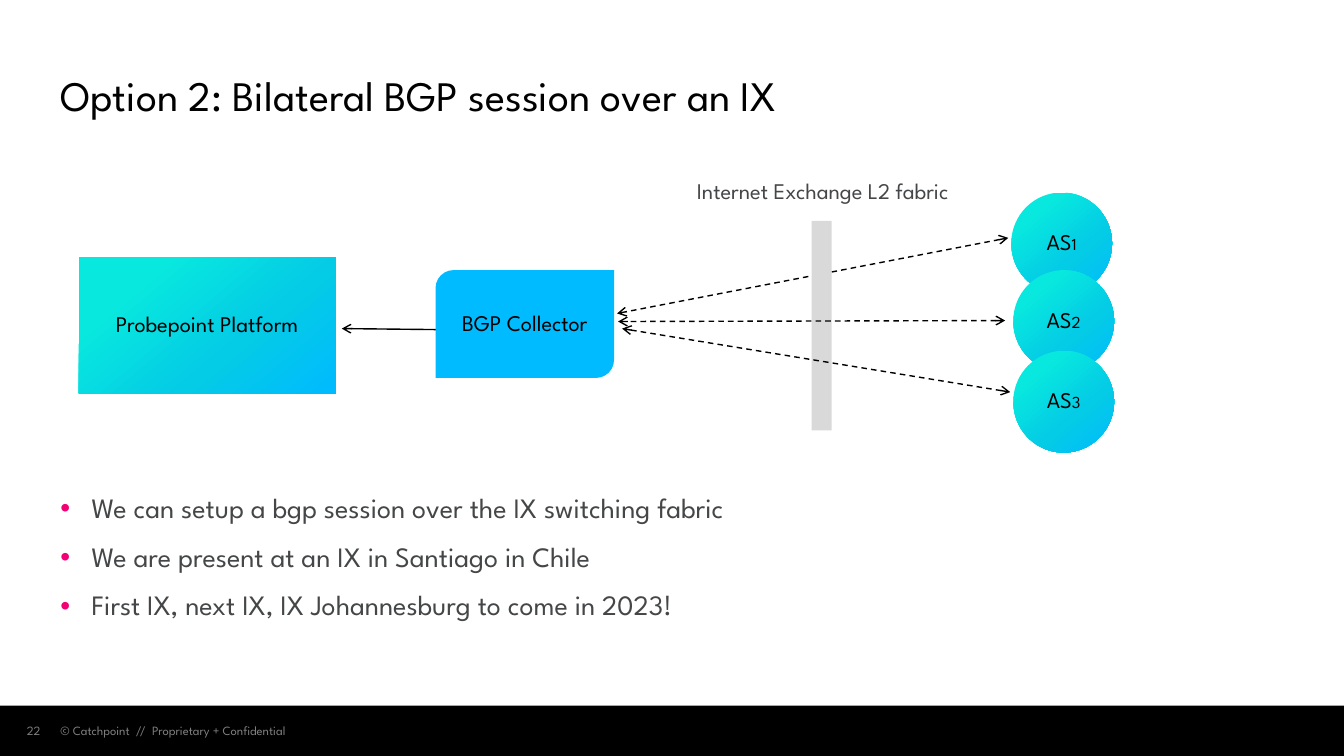
from lxml import etree
from pptx import Presentation
from pptx.dml.color import RGBColor
from pptx.enum.dml import MSO_LINE
from pptx.enum.shapes import MSO_CONNECTOR, MSO_SHAPE
from pptx.enum.text import MSO_ANCHOR as Anchor, PP_ALIGN as Align
from pptx.oxml import parse_xml
from pptx.oxml.ns import nsdecls, qn
from pptx.util import Inches, Pt

FONT = "League Spartan"
BLACK = RGBColor(0x00, 0x00, 0x00)
GRAY = RGBColor(0x80, 0x80, 0x80)
TEXT = RGBColor(0x45, 0x46, 0x47)
FABRIC = RGBColor(0xD9, 0xD9, 0xD9)
PINK = RGBColor(0xF2, 0x00, 0x75)
TURQUOISE = RGBColor(0x08, 0xE8, 0xDE)
CYAN = RGBColor(0x04, 0xCB, 0xE6)
BLUE = RGBColor(0x00, 0xBB, 0xFF)
GRADIENT = [(22, TURQUOISE), (63, CYAN), (100, BLUE)]
GRADIENT_ANGLE = 50


def add_bullet(para):
    props = para._p.get_or_add_pPr()
    props.set("marL", str(Inches(0.31)))
    props.set("indent", str(-Inches(0.31)))
    color = etree.SubElement(props, qn("a:buClr"))
    etree.SubElement(color, qn("a:srgbClr"), val=str(PINK))
    etree.SubElement(props, qn("a:buFont"), typeface="Arial")
    etree.SubElement(props, qn("a:buChar"), char="•")


def write_text(frame, paragraphs, size=16, color=BLACK, align=Align.LEFT,
               anchor=Anchor.TOP, line=1.0, before=0, bullet=False,
               margins=(0.1, 0.05)):
    """Each paragraph is a list of (text, size) spans or a plain string."""
    frame.word_wrap = True
    frame.vertical_anchor = anchor
    frame.margin_left = frame.margin_right = Inches(margins[0])
    frame.margin_top = frame.margin_bottom = Inches(margins[1])
    for index, content in enumerate(paragraphs):
        para = frame.add_paragraph() if index else frame.paragraphs[0]
        if bullet:
            add_bullet(para)
        para.alignment = align
        para.line_spacing = line
        if index:
            para.space_before = Pt(before)
        spans = [(content, size)] if isinstance(content, str) else content
        for text, span_size in spans:
            span = para.add_run()
            span.text = text
            span.font.name = FONT
            span.font.size = Pt(span_size)
            span.font.color.rgb = color


def add_text(page, place, paragraphs, **style):
    box = page.shapes.add_textbox(*map(Inches, place))
    write_text(box.text_frame, paragraphs, **style)


def fill_gradient(shape):
    stops = "".join(
        f'<a:gs pos="{position * 1000}"><a:srgbClr val="{color}"/></a:gs>'
        for position, color in GRADIENT)
    gradient = parse_xml(
        f'<a:gradFill {nsdecls("a")} rotWithShape="1"><a:gsLst>{stops}</a:gsLst>'
        f'<a:lin ang="{GRADIENT_ANGLE * 60000}" scaled="0"/></a:gradFill>')
    shape._element.spPr.find(qn("a:prstGeom")).addnext(gradient)


def add_block(page, kind, place, fill=None, spans=None):
    """Draw a preset shape; without a fill colour it gets the gradient."""
    shape = page.shapes.add_shape(kind, *map(Inches, place))
    shape.shadow.inherit = False
    shape.line.fill.background()
    if fill is None:
        fill_gradient(shape)
    else:
        shape.fill.solid()
        shape.fill.fore_color.rgb = fill
    if spans:
        write_text(shape.text_frame, [spans], align=Align.CENTER,
                   anchor=Anchor.MIDDLE, line=0.9, margins=(0, 0.05))


def add_arrow(page, start, end, two_way=False):
    arrow = page.shapes.add_connector(
        MSO_CONNECTOR.STRAIGHT, *map(Inches, start + end))
    arrow.line.color.rgb = BLACK
    arrow.line.width = Pt(1)
    if two_way:
        arrow.line.dash_style = MSO_LINE.DASH
    props = arrow._element.spPr
    for tip in ("a:headEnd", "a:tailEnd") if two_way else ("a:headEnd",):
        etree.SubElement(props.find(qn("a:ln")), qn(tip), type="arrow")
    etree.SubElement(props, qn("a:effectLst"))


def add_network(page, number, left, top):
    add_block(page, MSO_SHAPE.OVAL, (left, top, 1, 1.01),
              spans=[("AS", 16), (str(number), 12)])


def main():
    deck = Presentation()
    deck.slide_width, deck.slide_height = Inches(13.33), Inches(7.5)
    page = deck.slides.add_slide(deck.slide_layouts[6])

    # Footer
    add_block(page, MSO_SHAPE.RECTANGLE, (0, 7, 13.33, 0.5), BLACK)
    footer = dict(size=9, color=GRAY, anchor=Anchor.MIDDLE)
    add_text(page, (0.5, 7, 3.89, 0.5),
             ["© Catchpoint  //  Proprietary + Confidential"], **footer)
    add_text(page, (0, 7, 0.5, 0.5), ["22"], align=Align.RIGHT, **footer)

    # Title
    add_text(page, (0.5, 0.3, 12.33, 0.95),
             ["Option 2: Bilateral BGP session over an IX"],
             size=30, anchor=Anchor.BOTTOM, line=0.9)

    # Platform and collector
    add_arrow(page, (3.39, 3.26), (4.33, 3.27))
    add_block(page, MSO_SHAPE.RECTANGLE, (0.78, 2.55, 2.55, 1.35),
              spans="Probepoint Platform")
    add_block(page, MSO_SHAPE.ROUND_2_DIAG_RECTANGLE, (4.32, 2.68, 1.77, 1.07),
              BLUE, "BGP Collector")

    # Exchange fabric, passing over the first session
    add_network(page, 1, 10.03, 1.91)
    add_arrow(page, (10, 2.36), (6.12, 3.11), two_way=True)
    add_text(page, (6.23, 1.68, 3.86, 0.48), ["Internet Exchange L2 fabric"],
             color=TEXT, align=Align.CENTER, line=0.95, margins=(0.1, 0.1))
    add_block(page, MSO_SHAPE.RECTANGLE, (8.05, 2.19, 0.2, 2.08), FABRIC)

    # Remaining networks and their sessions
    add_network(page, 2, 10.05, 2.68)
    add_network(page, 3, 10.05, 3.48)
    add_arrow(page, (9.97, 3.18), (6.13, 3.19), two_way=True)
    add_arrow(page, (10.02, 3.89), (6.17, 3.26), two_way=True)

    # Key points
    add_text(page, (0.5, 4.84, 12.33, 1.91),
             ["We can setup a bgp session over the IX switching fabric",
              "We are present at an IX in Santiago in Chile",
              "First IX, next IX, IX Johannesburg to come in 2023!"],
             size=20, color=TEXT, line=0.95, before=12, bullet=True)

    deck.save("out.pptx")


if __name__ == "__main__":
    main()
